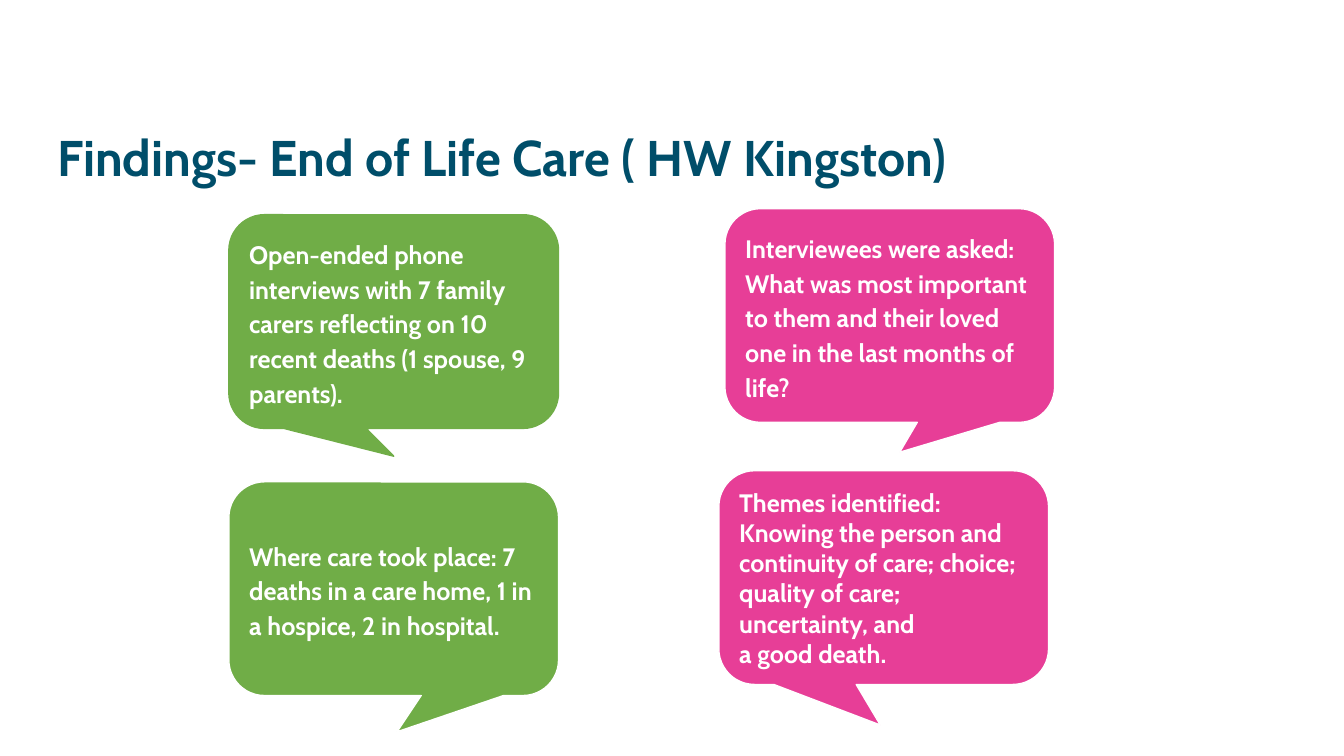
"""Build the end of life care findings slide with four speech callouts."""
from pptx import Presentation
from pptx.dml.color import RGBColor
from pptx.enum.shapes import MSO_SHAPE as SHAPE
from pptx.enum.text import MSO_ANCHOR as ANCHOR, PP_ALIGN as ALIGN
from pptx.util import Inches, Pt

COLORS = {"navy": "004E6A", "green": "70AD47", "pink": "E73E97", "white": "FFFFFF"}
FONT = "Cabin"
CALLOUT_W, CALLOUT_H = 3.27, 2.12
CALLOUTS = [
    (2.27, 2.13, "green", "green", (0, 0.63), 1.15,
     ["Open-ended phone interviews with 7 family carers reflecting on 10 "
      "recent deaths (1 spouse, 9 parents)."]),
    (7.19, 2.07, "pink", "white", (0.03, 0.64), 1.15,
     ["Interviewees were asked: What was most important to them and their "
      "loved one in the last months of life?"]),
    (2.27, 4.78, "green", "white", (0.01, 0.67), 1.15,
     ["Where care took place: 7 deaths in a care home, 1 in a hospice, "
      "2 in hospital."]),
    (7.13, 4.67, "pink", "white", (-0.01, 0.69), 1.0,
     ["Themes identified:",
      "Knowing the person and continuity of care; choice; quality of care; "
      "uncertainty, and",
      "a good death."]),
]


def rgb(name):
    return RGBColor.from_string(COLORS[name])


def add_text(tf, lines, size, color, spacing):
    tf.word_wrap = True
    for i, line in enumerate(lines):
        p = tf.add_paragraph() if i else tf.paragraphs[0]
        p.alignment = ALIGN.LEFT
        p.line_spacing = spacing
        r = p.add_run()
        r.text = line
        r.font.name = FONT
        r.font.size = Pt(size)
        r.font.bold = True
        r.font.color.rgb = rgb(color)


def add_title(s, text):
    box = s.shapes.add_textbox(Inches(0.47), Inches(0.88), Inches(11.93), Inches(1.71))
    tf = box.text_frame
    tf.vertical_anchor = ANCHOR.BOTTOM
    tf.margin_bottom = Inches(0.76)
    add_text(tf, [text], 35.8, "navy", 0.7)


def add_callout(s, left, top, fill, line, tail, spacing, lines):
    sp = s.shapes.add_shape(SHAPE.ROUNDED_RECTANGULAR_CALLOUT, Inches(left), Inches(top),
                            Inches(CALLOUT_W), Inches(CALLOUT_H))
    sp.adjustments[0], sp.adjustments[1] = tail
    sp.shadow.inherit = False
    sp.fill.solid()
    sp.fill.fore_color.rgb = rgb(fill)
    sp.line.color.rgb = rgb(line)
    sp.line.width = Pt(1)
    sp.text_frame.vertical_anchor = ANCHOR.MIDDLE
    add_text(sp.text_frame, lines, 18, "white", spacing)


def main():
    prs = Presentation()
    prs.slide_width, prs.slide_height = Inches(13.33), Inches(7.5)
    s = prs.slides.add_slide(prs.slide_layouts[6])
    add_title(s, "Findings- End of Life Care ( HW Kingston)")
    for callout in CALLOUTS:
        add_callout(s, *callout)
    prs.save("out.pptx")


if __name__ == "__main__":
    main()
